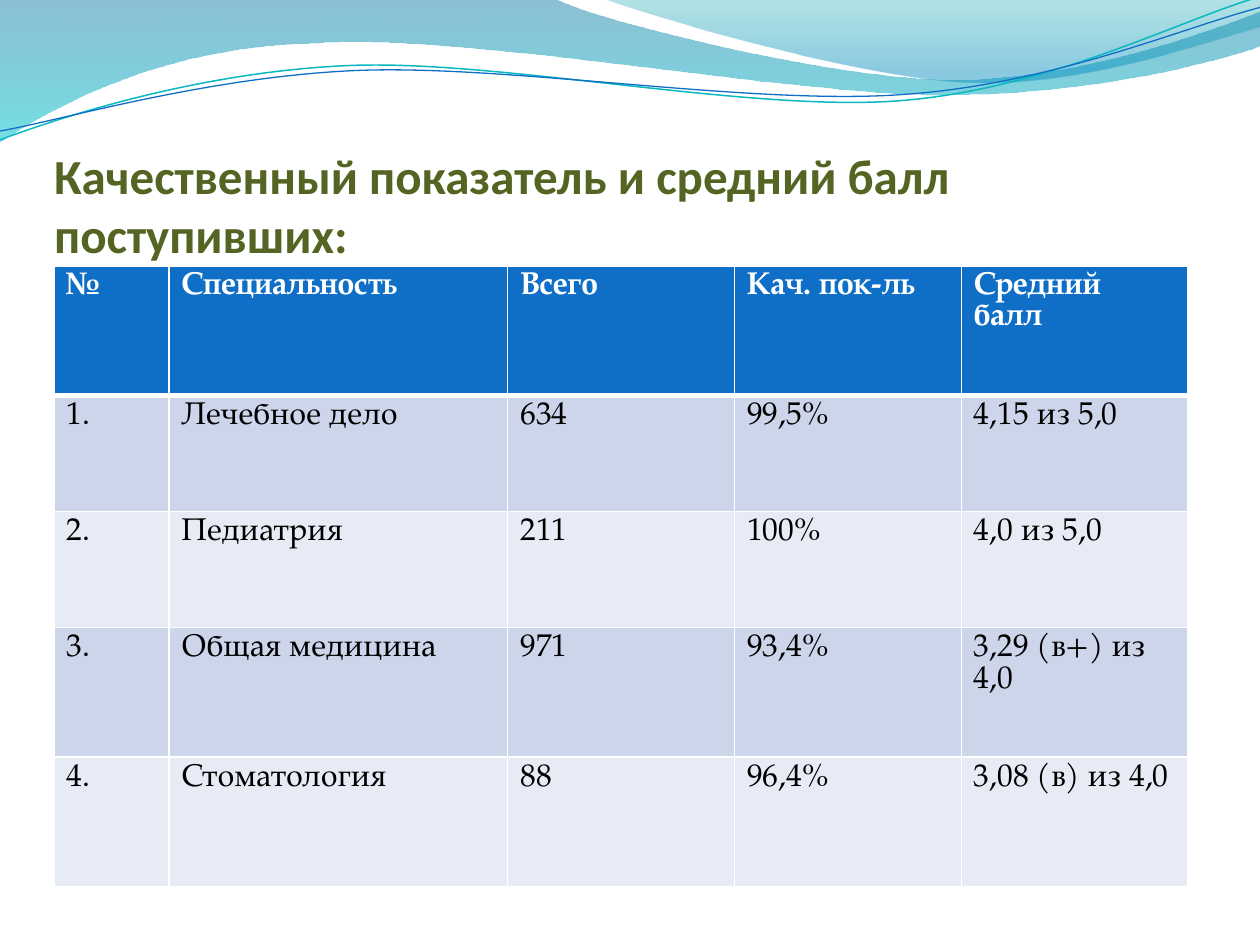
from dataclasses import dataclass
from math import cos, radians, sin

from lxml import etree
from pptx import Presentation
from pptx.dml.color import RGBColor
from pptx.enum.text import MSO_ANCHOR, MSO_AUTO_SIZE, PP_ALIGN
from pptx.oxml.ns import qn
from pptx.util import Inches, Pt

BOTTOM = MSO_ANCHOR.BOTTOM
NO_AUTOFIT = MSO_AUTO_SIZE.NONE
LEFT = PP_ALIGN.LEFT


@dataclass(frozen=True)
class Theme:
    title_font: str = "Calibri"
    table_font: str = "TeX Gyre Pagella"
    title_size: int = 28
    table_size: int = 18
    title: str = "546422"
    header: str = "0F6FC6"
    bands: tuple = ("CCD5EA", "E7EBF5")
    white: str = "FFFFFF"
    black: str = "000000"
    teal: str = "0AB8BF"


theme = Theme()


def write_text(frame, text, *, font, size, color, bold=False):
    para = frame.paragraphs[0]
    para.alignment = LEFT
    span = para.add_run()
    span.text = text
    span.font.name = font
    span.font.size = Pt(size)
    span.font.bold = bold
    span.font.color.rgb = RGBColor.from_string(color)


def add_wave(shapes, steps, closed):
    """Draw an outline in inches; a step of six numbers is a Bezier curve, of two a straight line."""
    corners = [(Inches(step[i]), Inches(step[i + 1]))
               for step in steps for i in range(0, len(step), 2)]
    builder = shapes.build_freeform(*corners[0])
    builder.add_line_segments(corners[1:], close=closed)
    wave = builder.convert_to_shape()
    wave.shadow.inherit = False
    segments = iter(list(wave.element.iter(qn("a:lnTo"))))
    for step in steps[1:]:
        segment = next(segments)
        if len(step) == 6:
            curve = etree.Element(qn("a:cubicBezTo"))
            segment.addprevious(curve)
            for part in (segment, next(segments), next(segments)):
                curve.append(part[0])
                part.getparent().remove(part)
    return wave


deck = Presentation()
deck.slide_width, deck.slide_height = Inches(10), Inches(7.5)
page = deck.slides.add_slide(deck.slide_layouts[5])

# Translucent waves: outline, then (position, colour, opacity in percent)
filled_waves = [
    ([(0, 0), (4.4, -0.01), (4.76, 0.17, 6.64, 0.63, 7.58, 0.63),
      (8.53, 0.63, 9.58, 0.26, 10, 0.09), (10.01, 0.36),
      (9.83, 0.44, 8.7, 0.76, 7.46, 0.75), (6.22, 0.75, 3.82, 0.28, 2.57, 0.34),
      (1.29, 0.36, 0.46, 0.83, -0.01, 1.13), (0, 0)],
     [(0, "0074A1", 45), (1, "00C6CF", 55)]),
    ([(4.79, -0.01), (5.09, 0.11, 6.82, 0.62, 7.69, 0.65),
      (8.56, 0.69, 9.61, 0.32, 10, 0.21), (10, 0), (4.79, -0.01)],
     [(0, "00A1A9", 30), (0.8, "008BBF", 45)]),
]
for steps, stops in filled_waves:
    wave = add_wave(page.shapes, steps, closed=True)
    wave.line.fill.background()
    wave.fill.gradient()
    wave.fill.gradient_angle = 270
    for stop, (position, color, opacity) in zip(wave.fill.gradient_stops, stops):
        stop.position = position
        stop.color.rgb = RGBColor.from_string(color)
    for node, (position, color, opacity) in zip(wave.element.iter(qn("a:srgbClr")), stops):
        etree.SubElement(node, qn("a:alpha"), val=str(opacity * 1000))

# Thin waves: outline as seen on the page, centre of rotation, colour, width
line_waves = [
    ([(0, 1.11), (0.48, 0.93, 1.58, 0.57, 2.77, 0.52),
      (3.95, 0.47, 5.93, 0.89, 7.13, 0.8), (8.33, 0.71, 9.38, 0.15, 9.98, -0.02)],
     (4.99, 0.58), theme.teal, 0.85),
    ([(0, 1.04), (0.47, 0.96, 1.64, 0.61, 2.83, 0.56),
      (4.03, 0.51, 5.97, 0.84, 7.17, 0.75), (8.36, 0.67, 9.41, 0.21, 10, 0.06)],
     (5, 0.59), theme.header, 0.75),
]
tilt = 2.7
cosine, sine = cos(radians(tilt)), sin(radians(tilt))
for steps, (center_x, center_y), color, width in line_waves:
    level_steps = []
    for step in steps:
        level = []
        for x, y in zip(step[::2], step[1::2]):
            dx, dy = x - center_x, y - center_y
            level += [center_x + dx * cosine - dy * sine, center_y + dx * sine + dy * cosine]
        level_steps.append(level)
    wave = add_wave(page.shapes, level_steps, closed=False)
    wave.rotation = 360 - tilt
    wave.fill.background()
    wave.line.color.rgb = RGBColor.from_string(color)
    wave.line.width = Pt(width)

# Title
title = page.shapes.title
title.left, title.top, title.width, title.height = map(Inches, (0.43, 0.92, 9, 1.17))
frame = title.text_frame
frame.auto_size = NO_AUTOFIT
frame.word_wrap = True
frame.vertical_anchor = BOTTOM
frame.margin_left = frame.margin_right = frame.margin_bottom = 0
frame.margin_top = Inches(0.05)
write_text(frame, "Качественный показатель и средний балл поступивших:",
           font=theme.title_font, size=theme.title_size, color=theme.title, bold=True)

# Table
rows = [
    ("№", "Специальность", "Всего", "Кач. пок-ль", "Средний балл"),
    ("1.", "Лечебное дело", "634", "99,5%", "4,15 из 5,0"),
    ("2.", "Педиатрия", "211", "100%", "4,0 из 5,0"),
    ("3.", "Общая медицина", "971", "93,4%", "3,29 (в+) из 4,0"),
    ("4.", "Стоматология", "88", "96,4%", "3,08 (в) из 4,0"),
]
column_widths = (0.91, 2.69, 1.8, 1.8, 1.8)
row_heights = (1.03, 0.92, 0.92, 1.03, 1.03)
table = page.shapes.add_table(len(rows), len(column_widths), Inches(0.43), Inches(2.11),
                              Inches(sum(column_widths)), Inches(sum(row_heights))).table
for column, width in zip(table.columns, column_widths):
    column.width = Inches(width)
for row, height in zip(table.rows, row_heights):
    row.height = Inches(height)

for row_index, texts in enumerate(rows):
    is_header = row_index == 0
    fill_color = theme.header if is_header else theme.bands[(row_index - 1) % 2]
    borders = {"lnL": 1, "lnR": 1, "lnT": 3 if row_index == 1 else 1,
               "lnB": 3 if is_header else 1}
    for column_index, text in enumerate(texts):
        cell = table.cell(row_index, column_index)
        write_text(cell.text_frame, text, font=theme.table_font, size=theme.table_size,
                   color=theme.white if is_header else theme.black, bold=is_header)
        properties = cell._tc.get_or_add_tcPr()
        for tag, width in borders.items():
            border = etree.SubElement(properties, qn(f"a:{tag}"), w=str(Pt(width)))
            paint = etree.SubElement(border, qn("a:solidFill"))
            etree.SubElement(paint, qn("a:srgbClr"), val=theme.white)
        cell.fill.solid()
        cell.fill.fore_color.rgb = RGBColor.from_string(fill_color)

deck.save("out.pptx")
